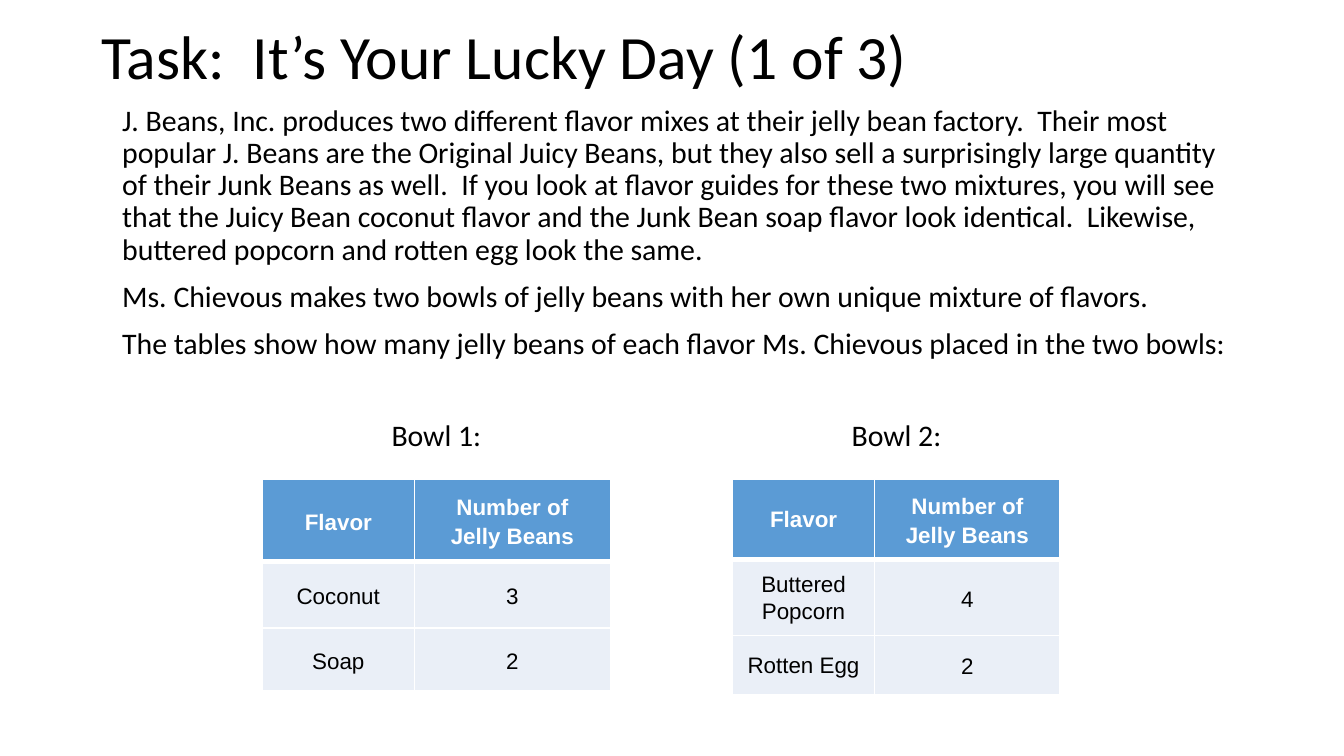
from lxml.etree import SubElement
from pptx import Presentation
from pptx.dml.color import RGBColor
from pptx.enum.text import MSO_ANCHOR, PP_ALIGN
from pptx.oxml.ns import qn
from pptx.util import Pt

HUES = {"ink": "000000", "paper": "FFFFFF", "head": "5B9BD5", "body": "EAEFF7"}

TITLE = "Task:  It’s Your Lucky Day (1 of 3)"
STORY = [
    "J. Beans, Inc. produces two different flavor mixes at their jelly bean factory.  "
    "Their most popular J. Beans are the Original Juicy Beans, but they also sell a "
    "surprisingly large quantity of their Junk Beans as well.  If you look at flavor "
    "guides for these two mixtures, you will see that the Juicy Bean coconut flavor and "
    "the Junk Bean soap flavor look identical.  Likewise, buttered popcorn and rotten egg "
    "look the same.",
    "Ms. Chievous makes two bowls of jelly beans with her own unique mixture of flavors.",
    "The tables show how many jelly beans of each flavor Ms. Chievous placed in the two bowls:",
]
HEADS = ("Flavor", "Number of\nJelly Beans")
BOWLS = [
    ("Bowl 1:", 140.5, (81.5, 105), (44.5, 35.5, 33.5),
     [("Coconut", "3"), ("Soap", "2")], 1.15),
    ("Bowl 2:", 392.5, (76, 99.5), (41, 39, 32),
     [("Buttered Popcorn", "4"), ("Rotten Egg", "2")], 1.07),
]
TOP = 256.5


def apply(item, values):
    for name, value in values.items():
        setattr(item, name, value)


def tint(hue):
    return RGBColor.from_string(HUES[hue])


def write(frame, lines, font, hue, para):
    for i, line in enumerate(lines):
        p = frame.paragraphs[0] if i == 0 else frame.add_paragraph()
        apply(p, para)
        run = p.add_run()
        run.text = line
        apply(run.font, font)
        run.font.color.rgb = tint(hue)


def add_text(slide, box, lines, size, para, anchor=MSO_ANCHOR.MIDDLE):
    frame = slide.shapes.add_textbox(*map(Pt, box)).text_frame
    apply(frame, {
        "word_wrap": True, "vertical_anchor": anchor,
        "margin_left": Pt(5), "margin_right": Pt(5),
        "margin_top": Pt(3), "margin_bottom": Pt(3),
    })
    font = {"name": "Calibri", "size": Pt(size)}
    write(frame, lines, font, "ink", {"line_spacing": 0.9, **para})
    return frame


def add_edge(cell, side, width):
    line = SubElement(cell._tc.get_or_add_tcPr(), qn(f"a:ln{side}"), w=str(Pt(width)))
    fill = SubElement(line, qn("a:solidFill"))
    SubElement(fill, qn("a:srgbClr"), val=HUES["paper"])


def fill_cell(cell, text, row, space):
    head = row == 0
    edges = {"L": 1, "R": 1, "T": 3 if row == 1 else 1, "B": 3 if head else 1}
    for side, width in edges.items():
        add_edge(cell, side, width)
    apply(cell, {
        "vertical_anchor": MSO_ANCHOR.MIDDLE,
        "margin_left": Pt(5), "margin_right": Pt(5),
        "margin_top": Pt(5), "margin_bottom": Pt(5),
    })
    cell.fill.solid()
    cell.fill.fore_color.rgb = tint("head" if head else "body")
    font = {"name": "Arial", "size": Pt(12), "bold": head}
    para = {"alignment": PP_ALIGN.CENTER, "line_spacing": space}
    write(cell.text_frame, text.split("\n"), font, "paper" if head else "ink", para)


def add_bowl(slide, label, left, cols, rows, data, space):
    wide = sum(cols)
    add_text(slide, (left, 222, wide, 24), [label], 16, {"alignment": PP_ALIGN.CENTER})
    box = map(Pt, (left, TOP, wide, sum(rows)))
    grid = slide.shapes.add_table(len(rows), len(cols), *box).table
    for col, width in zip(grid.columns, cols):
        col.width = Pt(width)
    for row, height in zip(grid.rows, rows):
        row.height = Pt(height)
    for r, texts in enumerate([HEADS, *data]):
        for c, text in enumerate(texts):
            fill_cell(grid.cell(r, c), text, r, 1.15 if c else space)


def main():
    deck = Presentation()
    apply(deck, {"slide_width": Pt(720), "slide_height": Pt(405)})
    slide = deck.slides.add_slide(deck.slide_layouts[6])
    add_text(slide, (49.5, 0, 621, 64), [TITLE], 33, {})
    story = add_text(slide, (49.5, 53.5, 621, 150), STORY, 16,
                     {"space_before": Pt(8)}, MSO_ANCHOR.TOP)
    for p in story.paragraphs:
        p._p.get_or_add_pPr().set("marL", str(Pt(11)))
    for bowl in BOWLS:
        add_bowl(slide, *bowl)
    deck.save("out.pptx")


if __name__ == "__main__":
    main()
